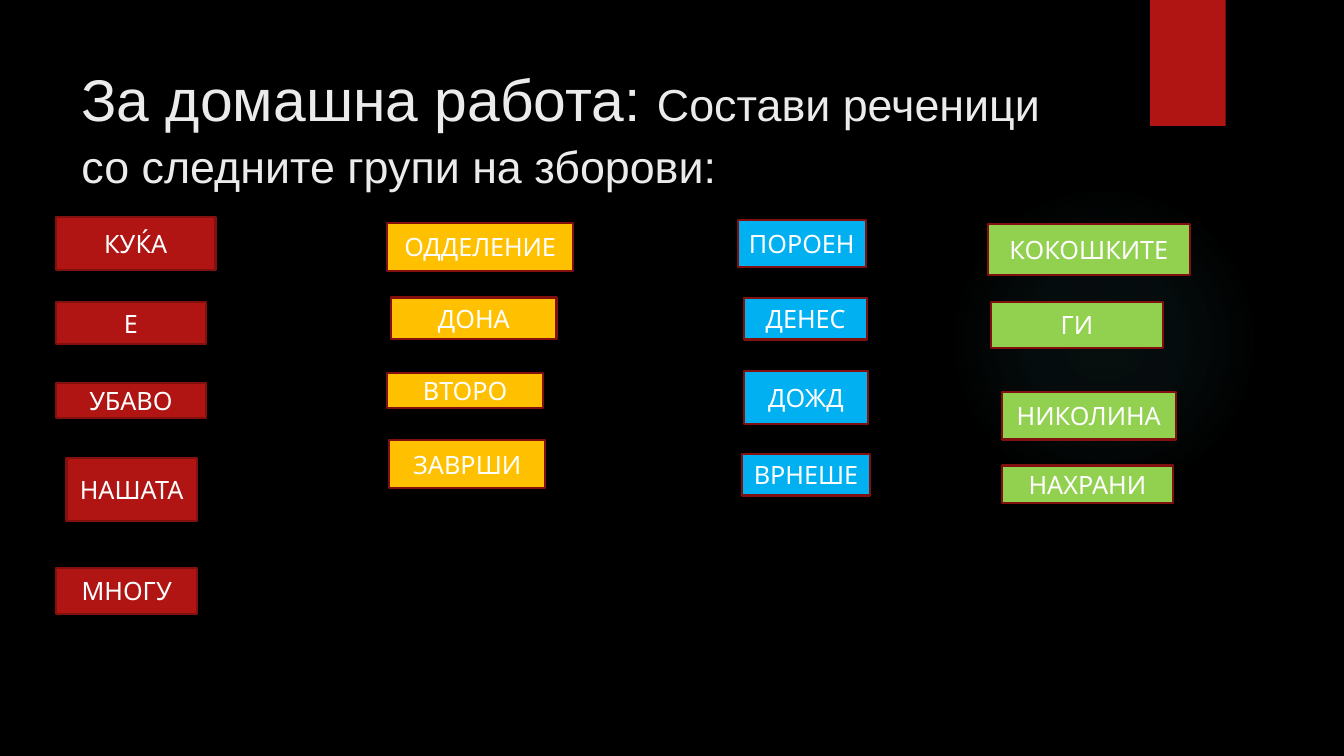
from lxml import etree
from pptx import Presentation
from pptx.dml.color import RGBColor
from pptx.enum.shapes import MSO_SHAPE
from pptx.enum.text import MSO_ANCHOR, MSO_AUTO_SIZE, PP_ALIGN
from pptx.oxml import parse_xml
from pptx.util import Pt

RECT, OVAL = MSO_SHAPE.RECTANGLE, MSO_SHAPE.OVAL
TOP, MIDDLE = MSO_ANCHOR.TOP, MSO_ANCHOR.MIDDLE
LEFT, CENTER = PP_ALIGN.LEFT, PP_ALIGN.CENTER
NO_FIT = MSO_AUTO_SIZE.NONE
NS = "http://schemas.openxmlformats.org/drawingml/2006/main"
COLORS = {
    "background": "000000", "title": "EBEBEB", "word": "FFFFFF",
    "border": "82100E", "glow": "50B9C1", "red": "B01513",
    "yellow": "FFC000", "blue": "00B0F0", "green": "92D050",
}
# Each word: text, left, top, width, height
WORD_GROUPS = {
    "red": [
        ("КУЌА", 40, 155, 114, 38),
        ("Е", 40, 216, 107, 30),
        ("УБАВО", 40, 273.5, 107, 25),
        ("НАШАТА", 47.5, 327, 93, 45),
        ("МНОГУ", 40, 405.5, 101, 33),
    ],
    "yellow": [
        ("ОДДЕЛЕНИЕ", 276.5, 159, 133, 34.5),
        ("ДОНА", 279.5, 212.5, 118, 30),
        ("ВТОРО", 276.5, 266.5, 111.5, 25),
        ("ЗАВРШИ", 278, 314.5, 111.5, 34),
    ],
    "blue": [
        ("ПОРОЕН", 527, 157, 91.5, 34),
        ("ДЕНЕС", 531.5, 213, 88, 29.5),
        ("ДОЖД", 531.5, 265, 88.5, 38),
        ("ВРНЕШЕ", 530, 324, 91.5, 30),
    ],
    "green": [
        ("КОКОШКИТЕ", 705.5, 160, 144.5, 36.5),
        ("ГИ", 708, 215.5, 122.5, 33),
        ("НИКОЛИНА", 715.5, 280, 124.5, 34),
        ("НАХРАНИ", 715.5, 332.5, 122.5, 26.5),
    ],
}


def rgb(name):
    return RGBColor.from_string(COLORS[name])


def add_plain_shape(kind, box, color):
    """Add a filled shape without shadow or outline."""
    shape = s.shapes.add_shape(kind, *(Pt(v) for v in box))
    shape.shadow.inherit = False
    shape.fill.solid()
    shape.fill.fore_color.rgb = rgb(color)
    shape.line.fill.background()
    return shape


prs = Presentation()
prs.slide_width, prs.slide_height = Pt(960), Pt(540)
s = prs.slides.add_slide(prs.slide_layouts[5])
s.background.fill.solid()
s.background.fill.fore_color.rgb = rgb("background")

# Soft round glow and the red tab at the top
glow = add_plain_shape(OVAL, (677.5, 132, 222, 222), "glow")
grad = parse_xml(f'<a:gradFill xmlns:a="{NS}"><a:gsLst/><a:path path="circle">'
                 '<a:fillToRect l="50000" t="50000" r="50000" b="50000"/>'
                 '</a:path></a:gradFill>')
for pos, alpha in ((0, 7), (36, 6), (69, 0)):
    stop = etree.SubElement(grad[0], f"{{{NS}}}gs", pos=str(pos * 1000))
    color = etree.SubElement(stop, f"{{{NS}}}srgbClr", val=COLORS["glow"])
    etree.SubElement(color, f"{{{NS}}}alpha", val=str(alpha * 1000))
solid = glow._element.spPr.find(f"{{{NS}}}solidFill")
solid.getparent().replace(solid, grad)
add_plain_shape(RECT, (821.5, 0, 54, 90), "red")

# Title, in front of the decoration
title = s.shapes.title
s.shapes._spTree.append(title._element)
title.left, title.top, title.width, title.height = Pt(51), Pt(36), Pt(741), Pt(426)
tf = title.text_frame
tf.word_wrap = True
tf.auto_size = NO_FIT
tf.vertical_anchor = TOP
p = tf.paragraphs[0]
p.alignment = LEFT
p.line_spacing = 1.1
p.font.name = "Arial"
p.font.color.rgb = rgb("title")
for text, size in (("За домашна работа: ", 42),
                   ("Состави реченици со следните групи на зборови:", 32)):
    r = p.add_run()
    r.text = text
    r.font.size = Pt(size)

# Word cards
for color, words in WORD_GROUPS.items():
    for word, *box in words:
        sp = add_plain_shape(RECT, box, color)
        sp.line.color.rgb = rgb("border")
        sp.line.width = Pt(1.5)
        tf = sp.text_frame
        tf.word_wrap = True
        tf.vertical_anchor = MIDDLE
        p = tf.paragraphs[0]
        p.text = word
        p.alignment = CENTER
        p.font.name = "Quicksand"
        p.font.size = Pt(18)
        p.font.color.rgb = rgb("word")

prs.save("out.pptx")
